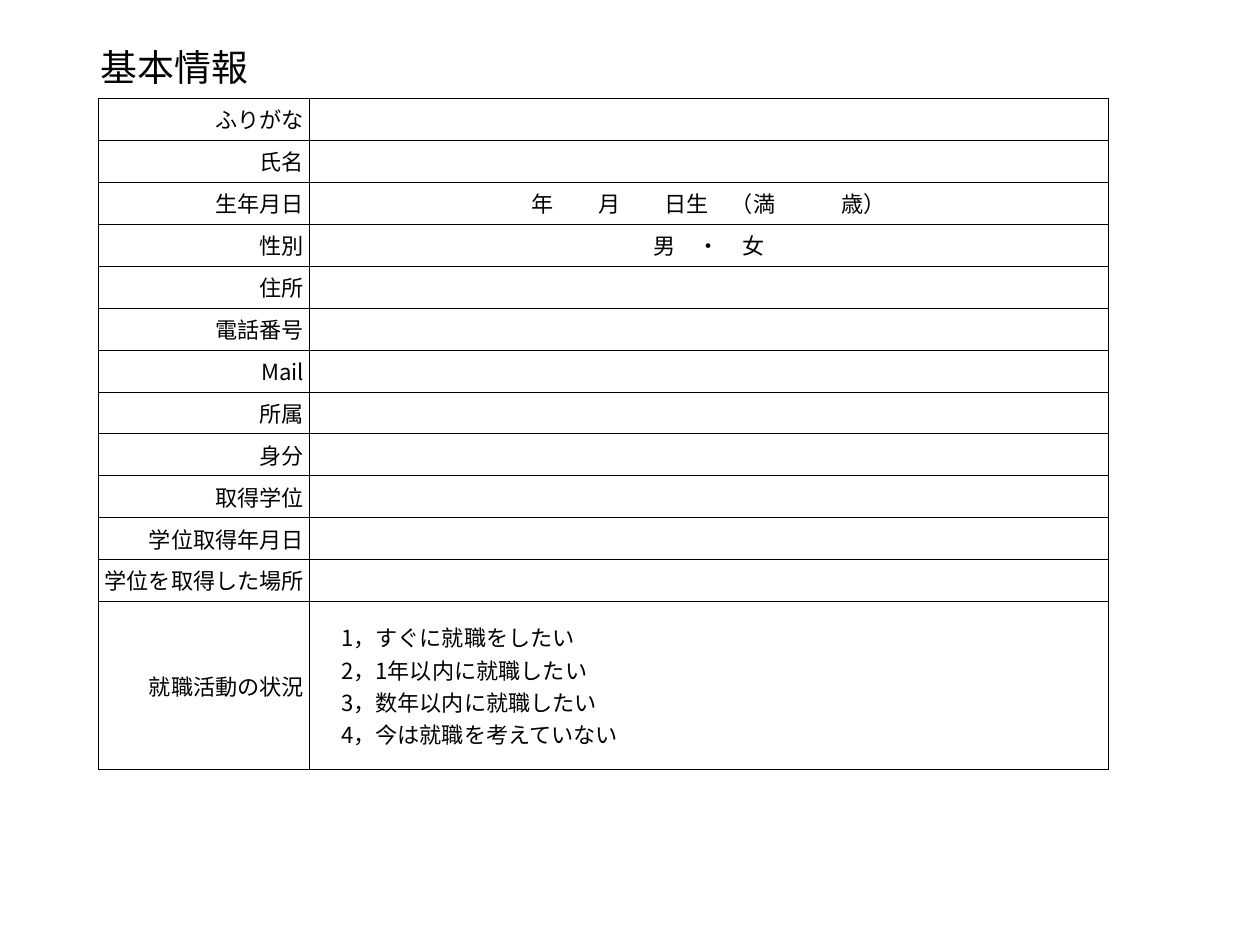
from lxml.etree import SubElement
from pptx import Presentation
from pptx.dml.color import RGBColor
from pptx.enum.text import MSO_ANCHOR as Anchor, MSO_AUTO_SIZE as AutoSize, PP_ALIGN as Align
from pptx.oxml.ns import qn
from pptx.util import Inches, Pt

FONT = "Noto Sans CJK JP"
BLACK, WHITE = "000000", "FFFFFF"
LEFT, COLUMN_WIDTHS = 1.11, (2.38, 9.02)
FIELDS_HEIGHT, STATUS_HEIGHT = 5.68, 1.9

FIELDS = [
    ("ふりがな", ""),
    ("氏名", ""),
    ("生年月日", "年　　月　　日生　（満　　　歳）"),
    ("性別", "男　・　女"),
    ("住所", ""),
    ("電話番号", ""),
    ("Mail", ""),
    ("所属", ""),
    ("身分", ""),
    ("取得学位", ""),
    ("学位取得年月日", ""),
    ("学位を取得した場所", ""),
]
STATUS_LABEL = "就職活動の状況"
STATUS_CHOICES = [
    "1，すぐに就職をしたい",
    "2，1年以内に就職したい",
    "3，数年以内に就職したい",
    "4，今は就職を考えていない",
]


def color(value):
    return RGBColor.from_string(value)


def apply_format(target, values):
    for name, value in values.items():
        setattr(target, name, value)


def write_text(frame, lines, size, align, line_spacing=1.0):
    frame.text = "\n".join(lines)
    for paragraph in frame.paragraphs:
        apply_format(paragraph, {"alignment": align, "line_spacing": line_spacing,
                                 "space_before": Pt(0)})
        for run in paragraph.runs:
            apply_format(run.font, {"size": Pt(size), "name": FONT, "bold": False})
            run.font.color.rgb = color(BLACK)
            SubElement(run.font._element, qn("a:ea"), typeface=FONT)


def add_borders(cell, width=0.25):
    properties = cell._tc.get_or_add_tcPr()
    for side in ("L", "R", "T", "B"):
        line = SubElement(properties, qn(f"a:ln{side}"), w=str(Pt(width)))
        fill = SubElement(line, qn("a:solidFill"))
        SubElement(fill, qn("a:srgbClr"), val=BLACK)


def format_cell(cell, lines, align, margin_left=0.06):
    apply_format(cell, {
        "margin_left": Inches(margin_left), "margin_right": Inches(0.06),
        "margin_top": Inches(0.05), "margin_bottom": Inches(0.05),
        "vertical_anchor": Anchor.MIDDLE,
    })
    write_text(cell.text_frame, lines, 18, align)
    add_borders(cell)
    cell.fill.solid()
    cell.fill.fore_color.rgb = color(WHITE)


def place_title(slide, text):
    title = slide.shapes.title
    apply_format(title, {"left": Inches(LEFT), "top": Inches(0.55),
                         "width": Inches(1.74), "height": Inches(0.48)})
    margins = {f"margin_{side}": Inches(0.03) for side in ("left", "right", "top", "bottom")}
    apply_format(title.text_frame, {**margins, "word_wrap": False,
                                    "auto_size": AutoSize.NONE,
                                    "vertical_anchor": Anchor.MIDDLE})
    write_text(title.text_frame, [text], 30, Align.LEFT, 0.9)


def add_form(slide):
    frame = slide.shapes.add_table(
        len(FIELDS) + 1, len(COLUMN_WIDTHS), Inches(LEFT), Inches(1.11),
        Inches(sum(COLUMN_WIDTHS)), Inches(FIELDS_HEIGHT + STATUS_HEIGHT))
    table = frame.table
    apply_format(table, {"first_row": False, "horz_banding": False})
    for column, width in zip(table.columns, COLUMN_WIDTHS):
        column.width = Inches(width)

    # One-line fields
    for index, (label, entry) in enumerate(FIELDS):
        table.rows[index].height = Inches(FIELDS_HEIGHT / len(FIELDS))
        format_cell(table.cell(index, 0), [label], Align.RIGHT)
        format_cell(table.cell(index, 1), [entry], Align.CENTER)

    # Job search status with its choices
    last = len(FIELDS)
    table.rows[last].height = Inches(STATUS_HEIGHT)
    format_cell(table.cell(last, 0), [STATUS_LABEL], Align.RIGHT)
    format_cell(table.cell(last, 1), STATUS_CHOICES, Align.LEFT, margin_left=0.36)


def main():
    presentation = Presentation()
    apply_format(presentation, {"slide_width": Inches(14.22), "slide_height": Inches(10.67)})
    slide = presentation.slides.add_slide(presentation.slide_layouts[5])
    place_title(slide, "基本情報")
    add_form(slide)
    presentation.save("out.pptx")


if __name__ == "__main__":
    main()
